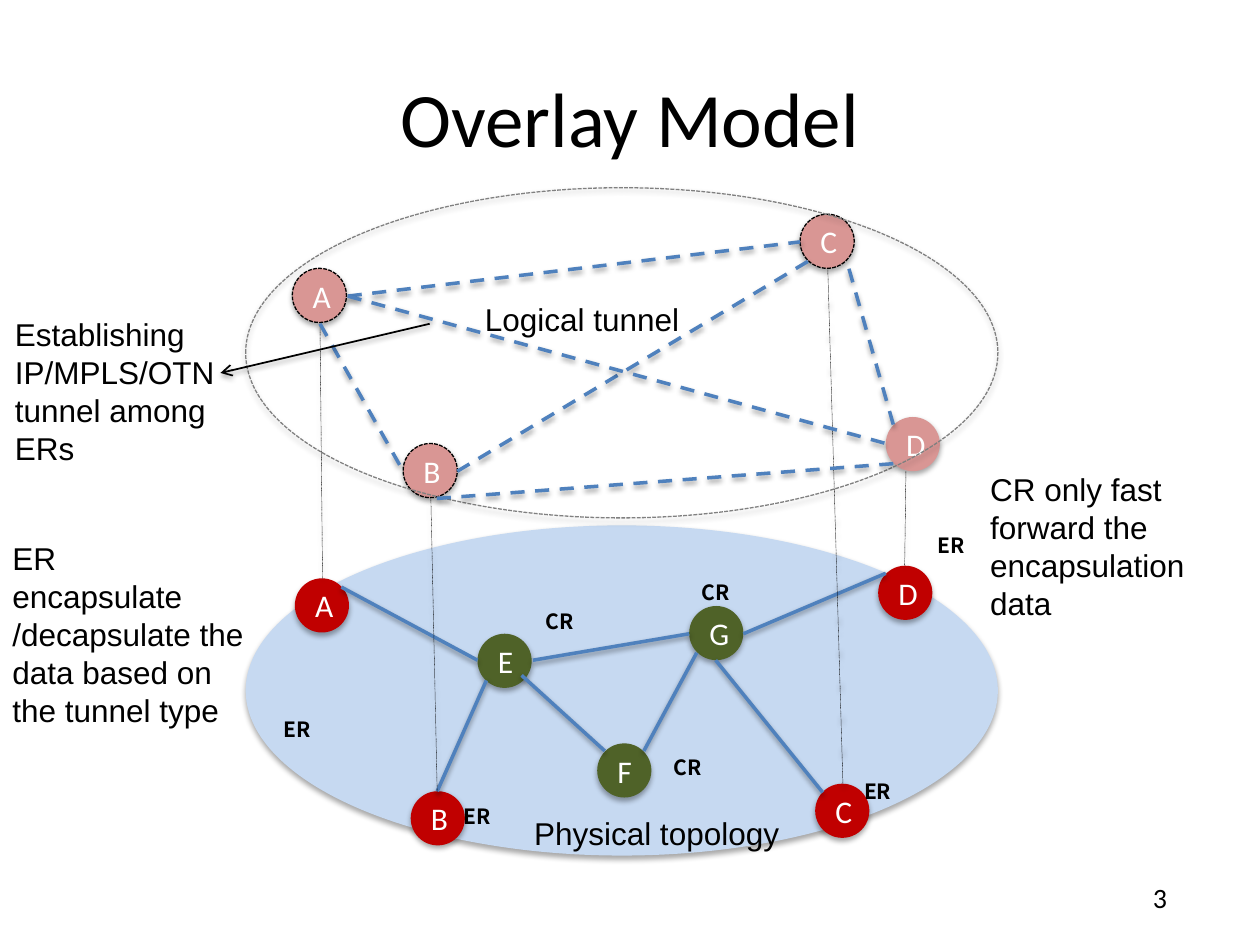
import pptx
import pptx.util
import pptx.dml.color
import pptx.enum.dml
import pptx.enum.shapes
import pptx.enum.text
import pptx.oxml
from dataclasses import dataclass

Inches, Pt = pptx.util.Inches, pptx.util.Pt
ANCHOR, ALIGN = pptx.enum.text.MSO_ANCHOR, pptx.enum.text.PP_ALIGN
DASH = pptx.enum.dml.MSO_LINE
OVAL = pptx.enum.shapes.MSO_SHAPE.OVAL
STRAIGHT = pptx.enum.shapes.MSO_CONNECTOR.STRAIGHT
NS = 'xmlns:a="http://schemas.openxmlformats.org/drawingml/2006/main"'


@dataclass
class Theme:
    black: str = "000000"
    white: str = "FFFFFF"
    plate: str = "C6D9F1"
    edge: str = "C00000"
    core: str = "4F6228"
    logical: str = "D99694"
    link: str = "4F81BD"
    outline: str = "808080"
    heading: str = "Calibri"
    body: str = "Arial"
    tag: str = "Noto Sans CJK SC"
    title_size: int = 44
    body_size: int = 18
    number_size: int = 16
    tag_size: int = 12


theme = Theme()
rgb = pptx.dml.color.RGBColor.from_string


def write(frame, text, font, size, color, align=ALIGN.LEFT, bold=False):
    frame.text = text
    paragraph = frame.paragraphs[0]
    paragraph.alignment = align
    run_font = paragraph.runs[0].font
    run_font.name, run_font.size, run_font.bold = font, Pt(size), bold
    run_font.color.rgb = rgb(color)
    return paragraph


def cast_shadow(shape, alpha, distance):
    """Give a shape or connector a soft shadow straight below it."""
    shape._element.spPr.append(pptx.oxml.parse_xml(
        f'<a:effectLst {NS}><a:outerShdw blurRad="{Pt(3.1)}" dist="{Pt(distance)}" '
        f'dir="5400000" rotWithShape="0"><a:srgbClr val="{theme.black}">'
        f'<a:alpha val="{alpha * 1000}"/></a:srgbClr></a:outerShdw></a:effectLst>'))


prs = pptx.Presentation()
prs.slide_width, prs.slide_height = Inches(10), Inches(7.5)
slide = prs.slides.add_slide(prs.slide_layouts[5])
shapes = slide.shapes

# Title
title = shapes.title
title.left, title.top, title.width, title.height = map(Inches, (0.5, 0.3, 9, 1.25))
title.text_frame.vertical_anchor = ANCHOR.MIDDLE
write(title.text_frame, "Overlay Model", theme.heading, theme.title_size,
      theme.black, ALIGN.CENTER)

# The two layers: (plane top, plane fill, nodes, links), all in drawing order.
# Nodes: letter, left, top, fill, dashed outline
physical_nodes = [
    ("A", 2.34, 4.59, theme.edge, False), ("E", 3.79, 5.03, theme.core, False),
    ("G", 5.47, 4.81, theme.core, False), ("D", 6.97, 4.49, theme.edge, False),
    ("C", 6.47, 6.22, theme.edge, False), ("B", 3.26, 6.28, theme.edge, False),
    ("F", 4.74, 5.9, theme.core, False),
]
logical_nodes = [
    ("A", 2.32, 2.13, theme.logical, True), ("B", 3.2, 3.52, theme.logical, True),
    ("C", 6.35, 1.7, theme.logical, True), ("D", 7.03, 3.31, theme.logical, False),
]
# Lines: start x, start y, end x, end y
physical_links = [
    (2.71, 4.66, 3.79, 5.24), (4.23, 5.24, 5.47, 5.03), (5.9, 5.03, 7.03, 4.55),
    (6.53, 6.29, 5.68, 5.24), (3.86, 5.4, 3.47, 6.28), (4.14, 5.36, 4.8, 5.96),
    (5.53, 5.18, 5.11, 5.96),
]
projections = [
    (7.19, 3.74, 7.18, 4.49), (6.57, 2.13, 6.69, 6.22),
    (3.42, 3.96, 3.47, 6.28), (2.54, 2.57, 2.56, 4.59),
]
tunnels = [
    (2.54, 2.57, 3.2, 3.74), (3.63, 3.74, 6.42, 2.07), (7.09, 3.37, 6.72, 2.07),
    (7.09, 3.68, 3.42, 3.96), (2.76, 2.35, 6.35, 1.92), (2.76, 2.35, 7.03, 3.52),
]
callout_arrow = [(3.41, 2.57, 1.75, 2.96)]

# Planes and nodes, from back to front
node_size = 0.43
ovals = [("", 1.95, 4.17, theme.plate, False), *physical_nodes,
         *logical_nodes, ("", 1.95, 1.49, None, True)]
for letter, left, top, fill, dashed in ovals:
    width, height = (node_size, node_size) if letter else (5.97, 2.62)
    oval = shapes.add_shape(OVAL, *map(Inches, (left, top, width, height)))
    if fill:
        oval.fill.solid()
        oval.fill.fore_color.rgb = rgb(fill)
    else:
        oval.fill.background()
    if dashed:
        oval.line.color.rgb = rgb(theme.black if letter else theme.outline)
        oval.line.width = Pt(0.75)
        oval.line.dash_style = DASH.SQUARE_DOT
    else:
        oval.line.fill.background()
    cast_shadow(oval, 35, 1.8)
    if letter:
        oval.text_frame.vertical_anchor = ANCHOR.MIDDLE
        write(oval.text_frame, letter, theme.heading, theme.body_size,
              theme.white, ALIGN.CENTER)

# Links, projections between layers, tunnels and the callout arrow
line_groups = [
    (physical_links, theme.link, 2, None),
    (projections, theme.black, 0.25, DASH.ROUND_DOT),
    (tunnels, theme.link, 2, DASH.DASH),
    (callout_arrow, theme.black, 1, None),
]
for lines, color, weight, dash in line_groups:
    for ends in lines:
        connector = shapes.add_connector(STRAIGHT, *map(Inches, ends))
        connector.line.color.rgb = rgb(color)
        connector.line.width = Pt(weight)
        if dash:
            connector.line.dash_style = dash
        if lines is callout_arrow:
            connector.line._get_or_add_ln().append(
                pptx.oxml.parse_xml(f'<a:tailEnd {NS} type="arrow"/>'))
        cast_shadow(connector, 38, 1.6)

# Router role tags
tags = [
    ("CR", 5.25, 5.94), ("CR", 5.47, 4.55), ("CR", 4.23, 4.78), ("ER", 2.15, 5.64),
    ("ER", 3.58, 6.33), ("ER", 6.76, 6.13), ("ER", 7.34, 4.18),
]
for role, left, top in tags:
    tag = shapes.add_textbox(*map(Inches, (left, top, 0.43, 0.3)))
    tag.text_frame.word_wrap = False
    write(tag.text_frame, role, theme.tag, theme.tag_size, theme.black, bold=True)

# Layer names and explanations
notes = [
    ("Physical topology", 4.14, 6.41, 2.29, 0.4),
    ("Logical tunnel", 3.75, 2.33, 1.75, 0.4),
    ("Establishing IP/MPLS/OTN tunnel among ERs", 0.02, 2.45, 1.81, 1.31),
    ("ER encapsulate /decapsulate the data based on the tunnel type",
     0, 4.23, 2.17, 1.61),
    ("CR only fast forward the encapsulation data", 7.76, 3.68, 1.91, 1.31),
]
for text, *box in notes:
    note = shapes.add_textbox(*map(Inches, box))
    note.text_frame.word_wrap = True
    paragraph = write(note.text_frame, text, theme.body, theme.body_size, theme.black)
    paragraph.line_spacing = Pt(21.7)

# Slide number
number = shapes.add_textbox(*map(Inches, (8.58, 6.92, 1.25, 0.4)))
number.text_frame.word_wrap = True
number.text_frame.vertical_anchor = ANCHOR.MIDDLE
write(number.text_frame, "3", theme.heading, theme.number_size, theme.black, ALIGN.CENTER)

prs.save("out.pptx")
